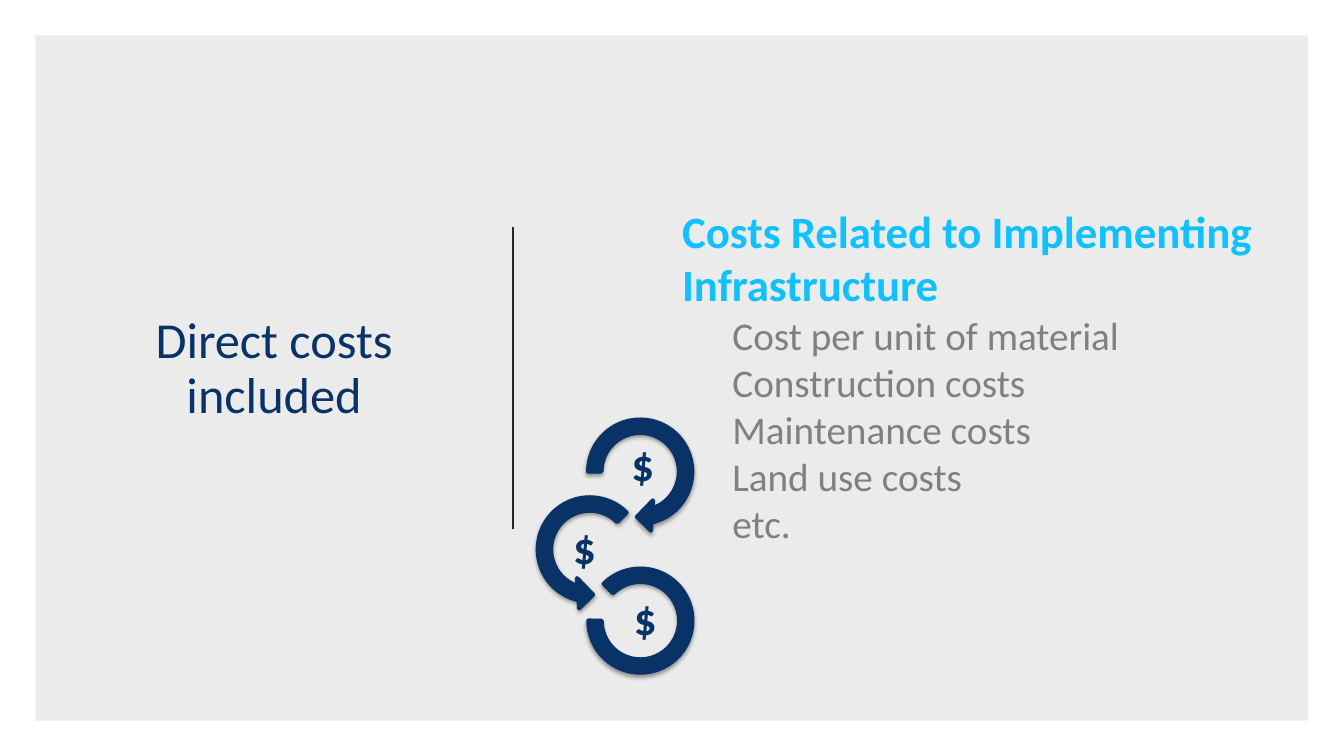
from lxml.etree import SubElement
from pptx import Presentation
from pptx.dml.color import RGBColor
from pptx.enum.shapes import MSO_CONNECTOR, MSO_SHAPE
from pptx.enum.text import MSO_ANCHOR, MSO_AUTO_SIZE, PP_ALIGN
from pptx.oxml.ns import qn
from pptx.util import Cm, Pt

NAVY = "093266"
SKY = "11C1FF"
GREY = "808080"
FACE = "Calibri"

ITEMS = ["Cost per unit of material", "Construction costs",
         "Maintenance costs", "Land use costs", "etc."]

# Shape, left, top, size, adjustments, centre of its dollar sign
RINGS = [
    (MSO_SHAPE.CIRCULAR_ARROW, 1.27, 0, 3.05,
     (0.11, 11.42, 45, 108, 0.125), (2.86, 1.41)),
    (MSO_SHAPE.LEFT_CIRCULAR_ARROW, 0, 1.96, 3.05,
     (0.11, 11.42, 63, 189, 0.125), (1.39, 3.5)),
    (MSO_SHAPE.BLOCK_ARC, 1.49, 3.97, 2.62,
     (135, 108, 0.127), (2.92, 5.3)),
]


def paint(target, color):
    target.rgb = RGBColor.from_string(color)


def style(para, size, color, bold=False):
    for run in para.runs:
        run.font.name = FACE
        run.font.size = Pt(size)
        run.font.bold = bold
        paint(run.font.color, color)


def alpha(color, value):
    SubElement(color, qn("a:alpha"), val=str(value * 1000))


def panel(slide, x, y, w, h):
    box = slide.shapes.add_shape(MSO_SHAPE.RECTANGLE, Cm(x), Cm(y), Cm(w), Cm(h))
    box.shadow.inherit = False
    box.fill.solid()
    paint(box.fill.fore_color, "000000")
    box.line.fill.background()
    alpha(box._element.spPr.find(qn("a:solidFill"))[0], 8)
    # Send behind the title
    slide.shapes._spTree.insert(2, box._element)


def heading(slide, x, y, w, h):
    title = slide.shapes.title
    title.left, title.top, title.width, title.height = Cm(x), Cm(y), Cm(w), Cm(h)
    frame = title.text_frame
    frame.text = "Direct costs\vincluded"
    frame.word_wrap = True
    frame.auto_size = MSO_AUTO_SIZE.NONE
    frame.vertical_anchor = MSO_ANCHOR.MIDDLE
    frame.margin_bottom = Cm(1.52)
    para = frame.paragraphs[0]
    para.alignment = PP_ALIGN.CENTER
    para.line_spacing = 0.9
    style(para, 36, NAVY)


def rule(slide, x, y, h):
    line = slide.shapes.add_connector(
        MSO_CONNECTOR.STRAIGHT, Cm(x), Cm(y), Cm(x), Cm(y + h))
    paint(line.line.color, "262626")
    line.line.width = Pt(1.5)
    SubElement(line._element.spPr, qn("a:effectLst"))


def costs(slide, x, y, w, h):
    frame = slide.shapes.add_textbox(Cm(x), Cm(y), Cm(w), Cm(h)).text_frame
    frame.word_wrap = True
    frame.text = "Costs Related to Implementing Infrastructure"
    style(frame.paragraphs[0], 32, SKY, True)
    for item in ITEMS:
        para = frame.add_paragraph()
        para.text = item
        para.level = 1
        props = para._p.get_or_add_pPr()
        props.set("marL", str(Cm(1.27)))
        props.set("indent", "0")
        style(para, 28, GREY)


def ring(slide, kind, x, y, size, adjust):
    shape = slide.shapes.add_shape(kind, Cm(x), Cm(y), Cm(size), Cm(size))
    for i, value in enumerate(adjust):
        shape.adjustments[i] = value
    shape.fill.solid()
    paint(shape.fill.fore_color, NAVY)
    paint(shape.line.color, NAVY)
    shape.line.width = Pt(3)
    # Soft shadow straight below
    shape.shadow.inherit = False
    effect = shape._element.spPr.find(qn("a:effectLst"))
    shade = SubElement(effect, qn("a:outerShdw"), blurRad=str(Pt(3.1)),
                       dist=str(Pt(1.6)), dir="5400000", rotWithShape="0")
    alpha(SubElement(shade, qn("a:srgbClr"), val="000000"), 38)


def dollar(slide, x, y, w=1.7, h=0.84):
    box = slide.shapes.add_textbox(Cm(x - w / 2), Cm(y - h / 2), Cm(w), Cm(h))
    frame = box.text_frame
    frame.text = "$"
    frame.word_wrap = True
    frame.vertical_anchor = MSO_ANCHOR.MIDDLE
    frame.margin_left = frame.margin_right = Cm(0.05)
    frame.margin_top = frame.margin_bottom = Cm(0.05)
    para = frame.paragraphs[0]
    para.alignment = PP_ALIGN.CENTER
    para.line_spacing = 0.9
    style(para, 32, NAVY, True)


def cycle(slide, x, y):
    for kind, left, top, size, adjust, (mid, row) in RINGS:
        ring(slide, kind, x + left, y + top, size, adjust)
        dollar(slide, x + mid, y + row)


def main():
    deck = Presentation()
    deck.slide_width, deck.slide_height = Cm(33.87), Cm(19.05)
    slide = deck.slides.add_slide(deck.slide_layouts[5])
    panel(slide, 0.89, 0.89, 32.08, 17.27)
    heading(slide, 0.89, 2.67, 12.04, 14.68)
    rule(slide, 12.93, 5.72, 7.62)
    costs(slide, 16.94, 5, 14.95, 9.6)
    cycle(slide, 13.34, 10.36)
    deck.save("out.pptx")


if __name__ == "__main__":
    main()
